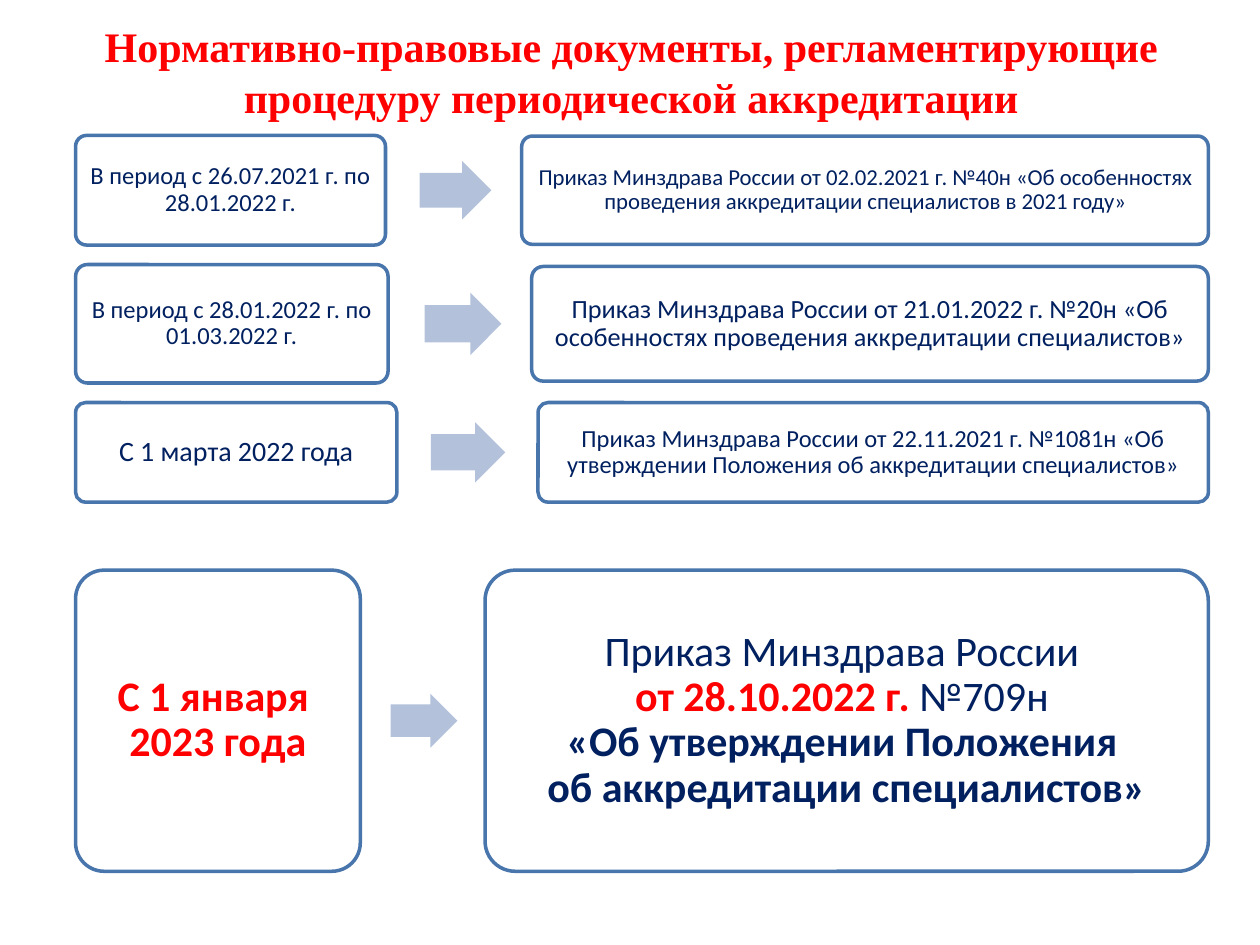
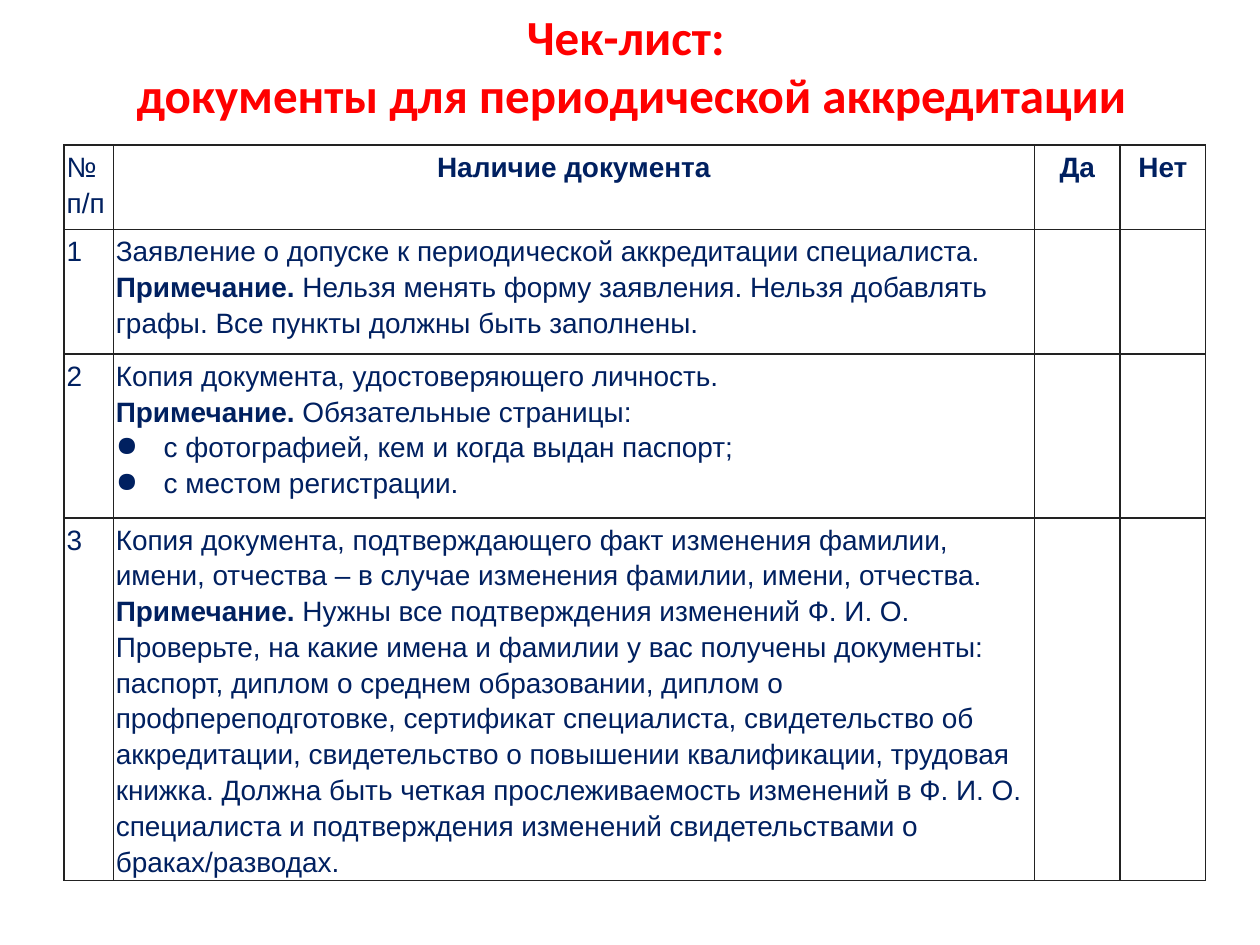
from copy import deepcopy
from dataclasses import dataclass

from lxml.etree import SubElement
from pptx import Presentation
from pptx.dml.color import RGBColor
from pptx.enum.shapes import MSO_SHAPE
from pptx.enum.text import MSO_ANCHOR, MSO_AUTO_SIZE, PP_ALIGN
from pptx.oxml.ns import qn
from pptx.util import Inches, Pt


@dataclass(frozen=True)
class Theme:
    red: str = "FF0000"
    navy: str = "002060"
    outline: str = "4875AC"
    arrow: str = "B3C1DB"
    white: str = "FFFFFF"
    grid: str = "222222"
    sans: str = "Calibri"
    serif: str = "Times New Roman"
    table_font: str = "Arial"
    law_title: int = 24
    checklist_title: int = 28
    key_text: int = 24
    table_text: int = 16


theme = Theme()


def color(code):
    return RGBColor.from_string(code)


def write(frame, paragraphs, font=theme.sans, size=theme.table_text, ink=theme.navy,
          bold=False, align=PP_ALIGN.LEFT, spacing=1.0, inset=None, bullets=()):
    """Each paragraph is a string or a list of (text, overrides) runs."""
    frame.word_wrap = True
    if inset is not None:
        frame.margin_left = frame.margin_right = Inches(inset)
        frame.margin_top = frame.margin_bottom = Inches(inset)
    for index, runs in enumerate(paragraphs):
        paragraph = frame.paragraphs[0] if index == 0 else frame.add_paragraph()
        paragraph.alignment = align
        paragraph.line_spacing = spacing
        if index in bullets:
            properties = paragraph._p.get_or_add_pPr()
            properties.set("marL", str(Inches(0.38)))
            properties.set("indent", str(-Inches(0.38)))
            SubElement(properties, qn("a:buChar"), char="●")
        for text, changes in [(runs, {})] if isinstance(runs, str) else runs:
            for number, line in enumerate(text.split("\n")):
                if number:
                    paragraph.add_line_break()
                    paragraph._p[-1].append(deepcopy(run._r.rPr))
                if not line:
                    continue
                run = paragraph.add_run()
                run.text = line
                run.font.name = font
                run.font.size = Pt(size)
                run.font.bold = changes.get("bold", bold)
                run.font.color.rgb = color(changes.get("ink", ink))


presentation = Presentation()
presentation.slide_width, presentation.slide_height = Inches(10), Inches(7.5)
title_only = presentation.slide_layouts[5]

# Both slides with their titles
titles = [
    ("Нормативно-правовые документы, регламентирующие процедуру периодической аккредитации",
     0.87, theme.serif, theme.law_title),
    ("Чек-лист: \nдокументы для периодической аккредитации",
     0.77, theme.sans, theme.checklist_title),
]
for wording, height, font, size in titles:
    title = presentation.slides.add_slide(title_only).shapes.title
    title.left, title.top = Inches(0.51), Inches(0.13)
    title.width, title.height = Inches(9), Inches(height)
    title.text_frame.auto_size = MSO_AUTO_SIZE.NONE
    title.text_frame.vertical_anchor = MSO_ANCHOR.MIDDLE
    write(title.text_frame, [wording], font=font, size=size, ink=theme.red,
          bold=True, align=PP_ALIGN.CENTER)
laws, checklist = presentation.slides

# Slide 1: period, arrow, order. Every row spans the same left and right edges
LEFT, RIGHT = 0.6, 9.59
ARROW_RATIO = 0.81
red_bold = {"ink": theme.red, "bold": True}
# centre; (period width, height, size, inset); (arrow left, width);
# (order left, height, size, inset); period text; order text
law_rows = [
    (1.51, (2.46, 0.87, 14, 0.06), (3.33, 0.57), (4.14, 0.86, 13, 0.05),
     "В период с 26.07.2021 г. по 28.01.2022 г.",
     "Приказ Минздрава России от 02.02.2021 г. №40н «Об особенностях "
     "проведения аккредитации специалистов в 2021 году»"),
    (2.57, (2.48, 0.94, 14, 0.06), (3.37, 0.61), (4.22, 0.91, 15, 0.06),
     "В период с 28.01.2022 г. по 01.03.2022 г.",
     "Приказ Минздрава России от 21.01.2022 г. №20н «Об особенностях "
     "проведения аккредитации специалистов»"),
    (3.59, (2.55, 0.79, 16, 0.07), (3.42, 0.59), (4.27, 0.79, 14, 0.06),
     "С 1 марта 2022 года",
     "Приказ Минздрава России от 22.11.2021 г. №1081н «Об "
     "утверждении Положения об аккредитации специалистов»"),
    (5.72, (2.26, 2.39, theme.key_text, 0.1), (3.1, 0.53),
     (3.85, 2.39, theme.key_text, 0.1),
     [("С 1 января \n2023 года", red_bold)],
     [("Приказ Минздрава России \n", {}), ("от 28.10.2022 г. ", red_bold),
      ("№709н \n", {}),
      ("«Об утверждении Положения \nоб аккредитации специалистов»", {"bold": True})]),
]
for centre, period, arrow_place, order, period_text, order_text in law_rows:
    period_width, period_height, period_size, period_inset = period
    order_left, order_height, order_size, order_inset = order
    boxes = [
        (LEFT, period_width, period_height, period_size, period_inset, period_text),
        (order_left, RIGHT - order_left, order_height, order_size, order_inset, order_text),
    ]
    for left, width, height, size, inset, wording in boxes:
        box = laws.shapes.add_shape(
            MSO_SHAPE.ROUNDED_RECTANGLE, Inches(left), Inches(centre - height / 2),
            Inches(width), Inches(height))
        box.adjustments[0] = 0.1
        box.shadow.inherit = False
        box.fill.solid()
        box.fill.fore_color.rgb = color(theme.white)
        box.line.color.rgb = color(theme.outline)
        box.line.width = Pt(2)
        box.text_frame.vertical_anchor = MSO_ANCHOR.MIDDLE
        write(box.text_frame, [wording], size=size, inset=inset,
              align=PP_ALIGN.CENTER, spacing=0.9)

    arrow_left, arrow_width = arrow_place
    arrow_height = arrow_width * ARROW_RATIO
    arrow = laws.shapes.add_shape(
        MSO_SHAPE.RIGHT_ARROW, Inches(arrow_left), Inches(centre - arrow_height / 2),
        Inches(arrow_width), Inches(arrow_height))
    arrow.adjustments[0], arrow.adjustments[1] = 0.6, 0.5
    arrow.shadow.inherit = False
    arrow.fill.solid()
    arrow.fill.fore_color.rgb = color(theme.arrow)
    arrow.line.fill.background()

# Slide 2: checklist table
note = ("Примечание.", {"bold": True})
documents = [
    ["Заявление о допуске к периодической аккредитации специалиста.",
     [note, (" Нельзя менять форму заявления. Нельзя добавлять графы. "
             "Все пункты должны быть заполнены.", {})]],
    ["Копия документа, удостоверяющего личность.",
     [note, (" Обязательные страницы:", {})],
     "с фотографией, кем и когда выдан паспорт;",
     "с местом регистрации."],
    ["Копия документа, подтверждающего факт изменения фамилии, имени, отчества "
     "– в случае изменения фамилии, имени, отчества.",
     [note, (" Нужны все подтверждения изменений Ф. И. О. Проверьте, на какие имена "
             "и фамилии у вас получены документы: паспорт, диплом о среднем образовании, "
             "диплом о профпереподготовке, сертификат специалиста, свидетельство об "
             "аккредитации, свидетельство о повышении квалификации, трудовая книжка. "
             "Должна быть четкая прослеживаемость изменений в Ф. И. О. специалиста и "
             "подтверждения изменений свидетельствами о браках/разводах.", {})]],
]
rows = [[["№ п/п"], ["Наличие документа"], ["Да"], ["Нет"]]]
rows += [[[str(number)], document, [], []]
         for number, document in enumerate(documents, start=1)]
column_widths = [0.39, 7.31, 0.68, 0.68]
row_heights = [0.67, 0.99, 1.3, 2.55]

table = checklist.shapes.add_table(
    len(rows), len(column_widths), Inches(0.51), Inches(1.15),
    Inches(sum(column_widths)), Inches(sum(row_heights))).table
table.first_row = table.horz_banding = False
for column, width in zip(table.columns, column_widths):
    column.width = Inches(width)
for row, height in zip(table.rows, row_heights):
    row.height = Inches(height)

for row_number, row in enumerate(rows):
    for column_number, paragraphs in enumerate(row):
        cell = table.cell(row_number, column_number)
        heading = row_number == 0 and column_number > 0
        cell.margin_left = cell.margin_right = Inches(0.02)
        cell.margin_top = cell.margin_bottom = Inches(0.02)
        write(cell.text_frame, paragraphs, font=theme.table_font, bold=heading,
              align=PP_ALIGN.CENTER if heading else PP_ALIGN.LEFT, spacing=1.15,
              bullets=(2, 3))
        # Borders come before the fill in the cell properties
        properties = cell._tc.get_or_add_tcPr()
        for side in ("a:lnL", "a:lnR", "a:lnT", "a:lnB"):
            border = SubElement(properties, qn(side), w=str(Pt(1)))
            SubElement(SubElement(border, qn("a:solidFill")), qn("a:srgbClr"), val=theme.grid)
        cell.fill.solid()
        cell.fill.fore_color.rgb = color(theme.white)

presentation.save("out.pptx")
